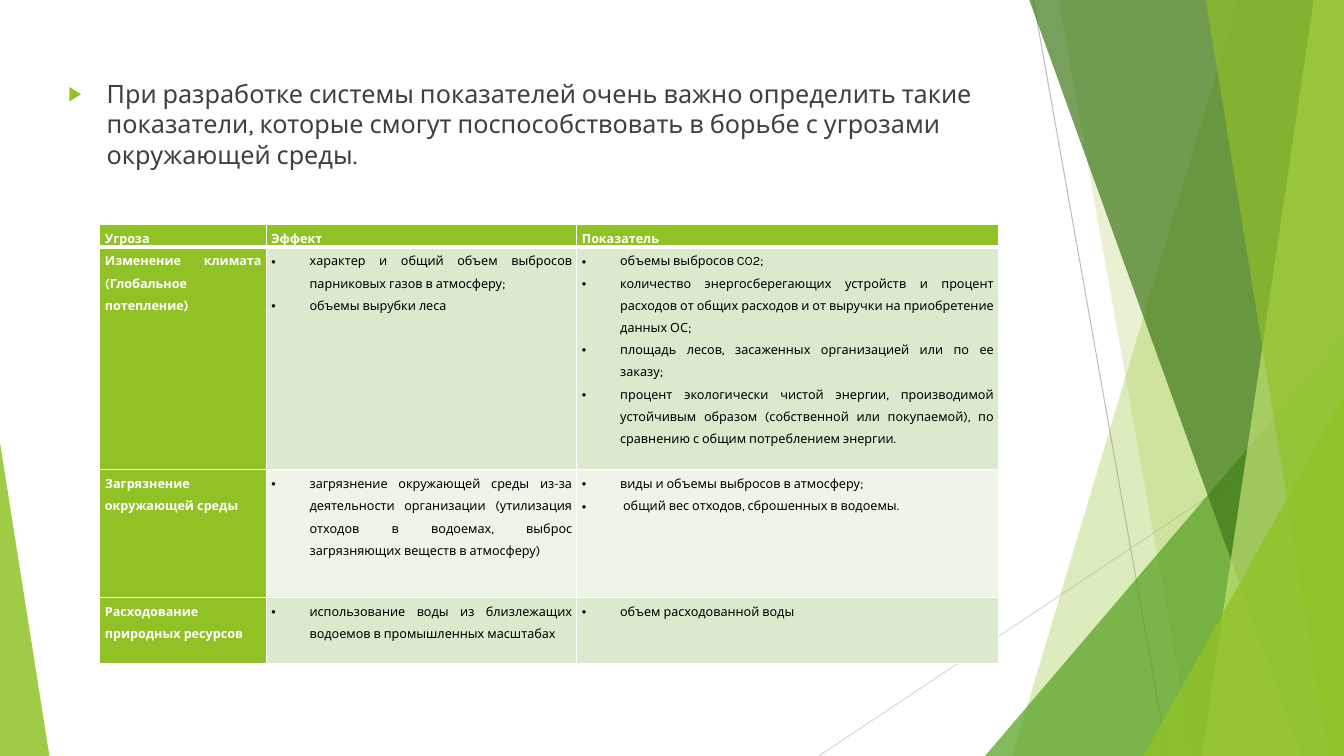
from lxml import etree
from pptx import Presentation
from pptx import util as u
from pptx.dml.color import RGBColor
from pptx.enum import shapes, text
from pptx.oxml.ns import qn

WIDTH, HEIGHT = u.Inches(13.33), u.Inches(7.5)
FONT = "Karla"
GREEN, WHITE, BLACK = "90C226", "FFFFFF", "000000"
INDENT = u.Inches(0.38)

RAYS = [
    ((76.89, 0), (86.87, 100), "BFBFBF"),
    ((100, 53.73), (60.92, 100), "D9D9D9"),
]
BACK_BANDS = [
    (92.12, 75.32, GREEN, 30),
    (78.77, 88.75, GREEN, 20),
]
FRONT_BANDS = [
    (76.59, 96.85, "3F7819", 70),
    (97.75, 89.42, "C0E474", 70),
    (89.72, 98.87, GREEN, 65),
]

INTRO = (
    "При разработке системы показателей очень важно определить такие показатели, "
    "которые смогут поспособствовать в борьбе с угрозами окружающей среды."
)
COLUMN_SHARES = [12.38, 23.11, 31.36]
ROW_SHARES = [2.67, 29.47, 16.93, 8.67]
ROW_FILLS = [GREEN, "DBE9CD", "EEF4E8", "DBE9CD"]
THREATS = [
    (["Угроза"], ["Эффект"], ["Показатель"]),
    (
        ["Изменение климата (Глобальное потепление)"],
        [
            "характер и общий объем выбросов парниковых газов в атмосферу;",
            "объемы вырубки леса",
        ],
        [
            "объемы выбросов CO2;",
            "количество энергосберегающих устройств и процент расходов от общих "
            "расходов и от выручки на приобретение данных ОС;",
            "площадь лесов, засаженных организацией или по ее заказу;",
            "процент экологически чистой энергии, производимой устойчивым образом "
            "(собственной или покупаемой), по сравнению с общим потреблением энергии.",
        ],
    ),
    (
        ["Загрязнение окружающей среды"],
        [
            "загрязнение окружающей среды из-за деятельности организации "
            "(утилизация отходов в водоемах, выброс загрязняющих веществ в атмосферу)"
        ],
        [
            "виды и объемы выбросов в атмосферу;",
            " общий вес отходов, сброшенных в водоемы.",
        ],
    ),
    (
        ["Расходование природных ресурсов"],
        ["использование воды из близлежащих водоемов в промышленных масштабах"],
        ["объем расходованной воды"],
    ),
]


def across(share):
    """Return a percentage of the slide width."""
    return round(WIDTH * share / 100)


def down(share):
    """Return a percentage of the slide height."""
    return round(HEIGHT * share / 100)


def paint(color_owner, color):
    """Give a fill a solid hex colour."""
    color_owner.solid()
    color_owner.fore_color.rgb = RGBColor.from_string(color)


def tint(facet, color, opacity):
    """Style a decorative facet with a translucent fill and no outline."""
    facet.shadow.inherit = False
    facet.line.fill.background()
    paint(facet.fill, color)
    swatch = facet.fill._xPr.find(qn("a:solidFill"))[0]
    etree.SubElement(swatch, qn("a:alpha"), val=str(opacity * 1000))


def add_ray(slide, start, end, color):
    """Draw a thin decorative line between two points."""
    ray = slide.shapes.add_connector(
        shapes.MSO_CONNECTOR.STRAIGHT,
        across(start[0]), down(start[1]), across(end[0]), down(end[1]),
    )
    paint(ray.line.fill, color)
    ray.line.width = u.Pt(0.75)
    etree.SubElement(ray._element.spPr, qn("a:effectLst"))


def add_band(slide, top, bottom, color, opacity):
    """Draw a full-height band from a slanted left edge to the right margin."""
    outline = slide.shapes.build_freeform(across(top), 0)
    outline.add_line_segments([(WIDTH, 0), (WIDTH, HEIGHT), (across(bottom), HEIGHT)])
    tint(outline.convert_to_shape(), color, opacity)


def add_corner(slide, left, top, width, apex, color, opacity):
    """Draw a triangle standing on the lower edge of the slide."""
    corner = slide.shapes.add_shape(
        shapes.MSO_SHAPE.ISOSCELES_TRIANGLE,
        across(left), down(top), across(width), down(100 - top),
    )
    corner.adjustments[0] = apex
    tint(corner, color, opacity)


def add_bullet(paragraph, mark, color=None, size=100):
    """Give a paragraph a hanging bullet."""
    properties = paragraph._p.get_or_add_pPr()
    properties.set("marL", str(INDENT))
    properties.set("indent", str(-INDENT))
    if color:
        holder = etree.SubElement(properties, qn("a:buClr"))
        etree.SubElement(holder, qn("a:srgbClr"), val=color)
    etree.SubElement(properties, qn("a:buSzPct"), val=str(size * 1000))
    etree.SubElement(properties, qn("a:buFont"), typeface="Arial")
    etree.SubElement(properties, qn("a:buChar"), char=mark)


def format_runs(paragraph, size, color, bold=False):
    """Set the typeface, size, colour and weight of a paragraph's runs."""
    for run in paragraph.runs:
        run.font.name = FONT
        run.font.size = u.Pt(size)
        run.font.bold = bold
        run.font.color.rgb = RGBColor.from_string(color)


def add_intro(slide):
    """Place the introductory statement."""
    intro = slide.shapes.add_textbox(across(4.35), down(9.73), across(73), down(14.8))
    intro.text_frame.word_wrap = True
    intro.text_frame.text = INTRO
    statement = intro.text_frame.paragraphs[0]
    statement.space_before = u.Pt(10)
    add_bullet(statement, "▶", GREEN, 80)
    format_runs(statement, 18, "404040")


def add_borders(cell, row):
    """Draw white cell borders, heavier below the header."""
    properties = cell._tc.get_or_add_tcPr()
    heavy = {(0, "B"), (1, "T")}
    for side in "LRTB":
        points = 3 if (row, side) in heavy else 1
        border = etree.SubElement(properties, qn(f"a:ln{side}"), w=str(u.Pt(points)))
        solid = etree.SubElement(border, qn("a:solidFill"))
        etree.SubElement(solid, qn("a:srgbClr"), val=WHITE)


def fill_cell(cell, row, column, items):
    """Write and format one table cell."""
    heading = row == 0 or column == 0
    cell.margin_left = cell.margin_right = u.Inches(0.05)
    cell.margin_top = cell.margin_bottom = 0
    add_borders(cell, row)
    paint(cell.fill, GREEN if heading else ROW_FILLS[row])
    cell.text_frame.text = "\n".join(items)
    for item in cell.text_frame.paragraphs:
        item.alignment = text.PP_ALIGN.JUSTIFY
        item.line_spacing = 1.5
        if not heading:
            add_bullet(item, "•")
        format_runs(item, 9, WHITE if heading else BLACK, heading)


def add_threat_table(slide):
    """Place the table of threats, effects and indicators."""
    threats = slide.shapes.add_table(
        len(ROW_SHARES), len(COLUMN_SHARES), across(7.43), down(29.73),
        across(sum(COLUMN_SHARES)), down(sum(ROW_SHARES)),
    ).table
    for column, share in zip(threats.columns, COLUMN_SHARES):
        column.width = across(share)
    for row, share in zip(threats.rows, ROW_SHARES):
        row.height = down(share)
    for row, entries in enumerate(THREATS):
        for column, items in enumerate(entries):
            fill_cell(threats.cell(row, column), row, column, items)


def main():
    """Build and save the slide."""
    deck = Presentation()
    deck.slide_width, deck.slide_height = WIDTH, HEIGHT
    slide = deck.slides.add_slide(deck.slide_layouts[6])
    for ray in RAYS:
        add_ray(slide, *ray)
    for band in BACK_BANDS:
        add_band(slide, *band)
    add_corner(slide, 73.29, 44.4, 26.71, 1, "54A021", 72)
    for band in FRONT_BANDS:
        add_band(slide, *band)
    add_corner(slide, 85.07, 52.4, 14.93, 1, GREEN, 80)
    add_corner(slide, 0, 58.53, 3.68, 0, GREEN, 85)
    add_threat_table(slide)
    add_intro(slide)
    deck.save("out.pptx")


if __name__ == "__main__":
    main()
